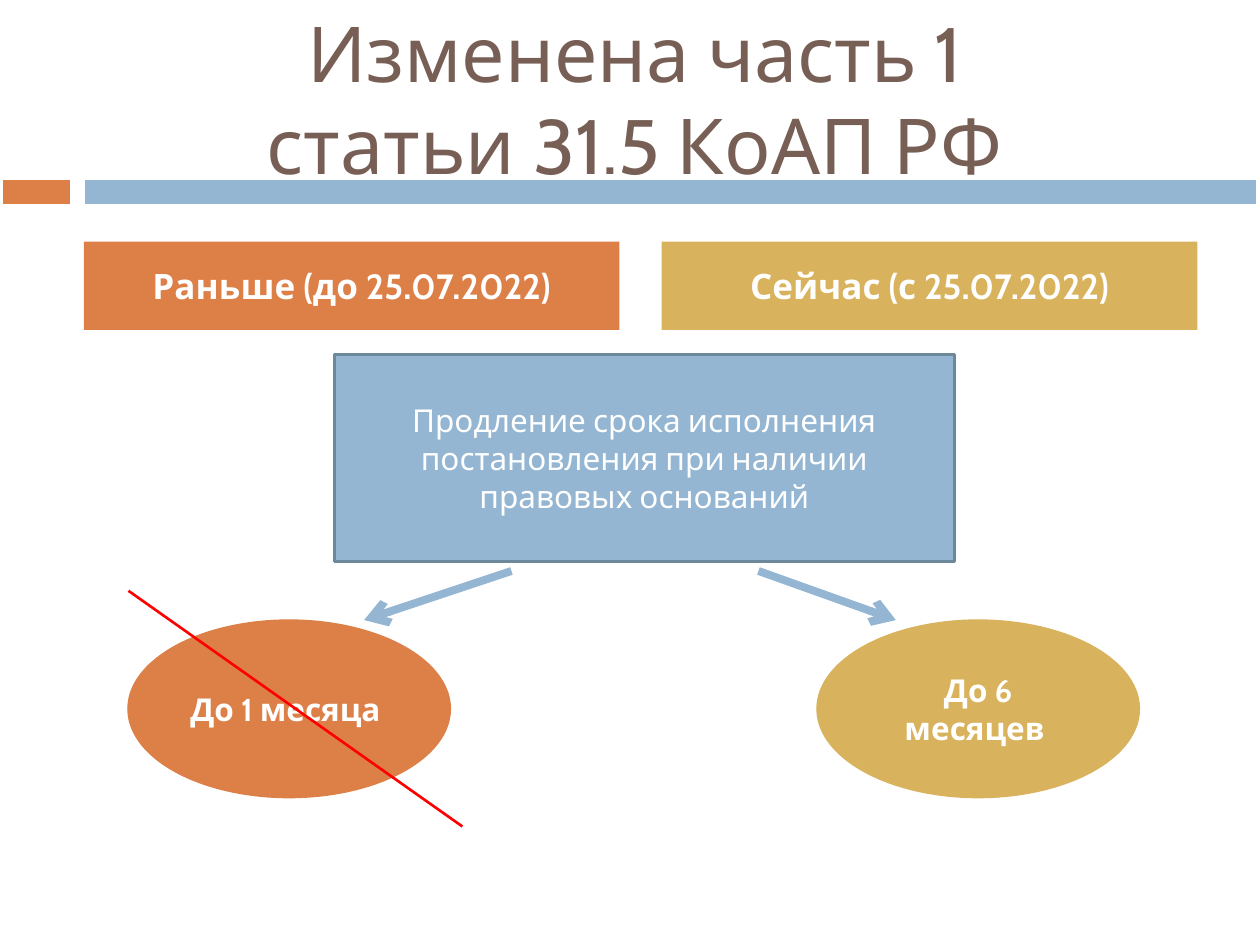
from lxml import etree
from pptx import Presentation
from pptx.dml.color import RGBColor
from pptx.enum.shapes import MSO_CONNECTOR as CONNECTOR, MSO_SHAPE as SHAPE
from pptx.enum.text import MSO_ANCHOR as ANCHOR, PP_ALIGN as ALIGN
from pptx.oxml.ns import qn
from pptx.util import Cm, Pt

ORANGE, GOLD, BLUE, WHITE = "DD8047", "D8B25C", "94B6D2", "FFFFFF"


def color(value):
    return RGBColor.from_string(value)


def write(shape, text, size, font_color, bold=False, before=0):
    frame = shape.text_frame
    frame.text = text
    frame.word_wrap = True
    frame.vertical_anchor = ANCHOR.MIDDLE
    paragraph = frame.paragraphs[0]
    paragraph.alignment = ALIGN.CENTER
    paragraph.space_before = Pt(before)
    for run in paragraph.runs:
        run.font.name = "Cabin"
        run.font.size = Pt(size)
        run.font.bold = bold
        run.font.color.rgb = color(font_color)


presentation = Presentation()
presentation.slide_width, presentation.slide_height = Cm(25.4), Cm(19.05)
slide = presentation.slides.add_slide(presentation.slide_layouts[6])
shapes = slide.shapes

# Boxes: preset, left, top, width, height, fill, line, line width, text, size, bold, space before
BAR, OVAL = SHAPE.RECTANGLE, SHAPE.OVAL
boxes = [
    # Divider under the title
    (BAR, 0, 3.56, 1.48, 0.63, ORANGE, WHITE, 4, "", 18, False, 0),
    (BAR, 1.65, 3.56, 23.75, 0.63, BLUE, WHITE, 4, "", 18, False, 0),
    # Column headings
    (BAR, 1.69, 4.87, 10.8, 1.78, ORANGE, None, 0, "Раньше (до 25.07.2022)", 20, True, 7),
    (BAR, 13.34, 4.87, 10.8, 1.78, GOLD, None, 0, "Сейчас (с 25.07.2022)", 20, True, 7),
    # Subject
    (BAR, 6.74, 7.15, 12.5, 4.17, BLUE, "6D879B", 1.5,
     "Продление срока исполнения постановления при наличии правовых оснований", 18, False, 0),
    # Terms
    (OVAL, 16.47, 12.5, 6.5, 3.58, GOLD, GOLD, 0.79, "До 6 месяцев ", 18, True, 0),
    (OVAL, 2.58, 12.5, 6.5, 3.58, ORANGE, ORANGE, 0.79, "До 1 месяца ", 18, True, 0),
]
for preset, left, top, width, height, fill, line, weight, text, size, bold, before in boxes:
    shape = shapes.add_shape(preset, Cm(left), Cm(top), Cm(width), Cm(height))
    shape.shadow.inherit = False
    shape.fill.solid()
    shape.fill.fore_color.rgb = color(fill)
    if line:
        shape.line.color.rgb = color(line)
        shape.line.width = Pt(weight)
    else:
        shape.line.fill.background()
    if text:
        write(shape, text, size, WHITE, bold, before)

# Title, in front of the divider so its white outline cannot cover the letters
title = shapes.add_textbox(Cm(1.47), Cm(0.76), Cm(22.66), Cm(2.41))
write(title, "Изменена часть 1\vстатьи 31.5 КоАП РФ", 44, "775F55")

# Arrows to the terms, and the strike through the old one
lines = [
    (10.31, 11.51, 7.34, 12.5, BLUE, 4.5, True),
    (15.29, 11.51, 18.06, 12.5, BLUE, 4.5, True),
    (2.59, 11.91, 9.32, 16.66, "FF0000", 1.5, False),
]
for x1, y1, x2, y2, line, weight, has_arrow in lines:
    connector = shapes.add_connector(CONNECTOR.STRAIGHT, Cm(x1), Cm(y1), Cm(x2), Cm(y2))
    connector.line.color.rgb = color(line)
    connector.line.width = Pt(weight)
    if has_arrow:
        etree.SubElement(connector.line._get_or_add_ln(), qn("a:tailEnd"), type="arrow")
    etree.SubElement(connector._element.spPr, qn("a:effectLst"))

presentation.save("out.pptx")
